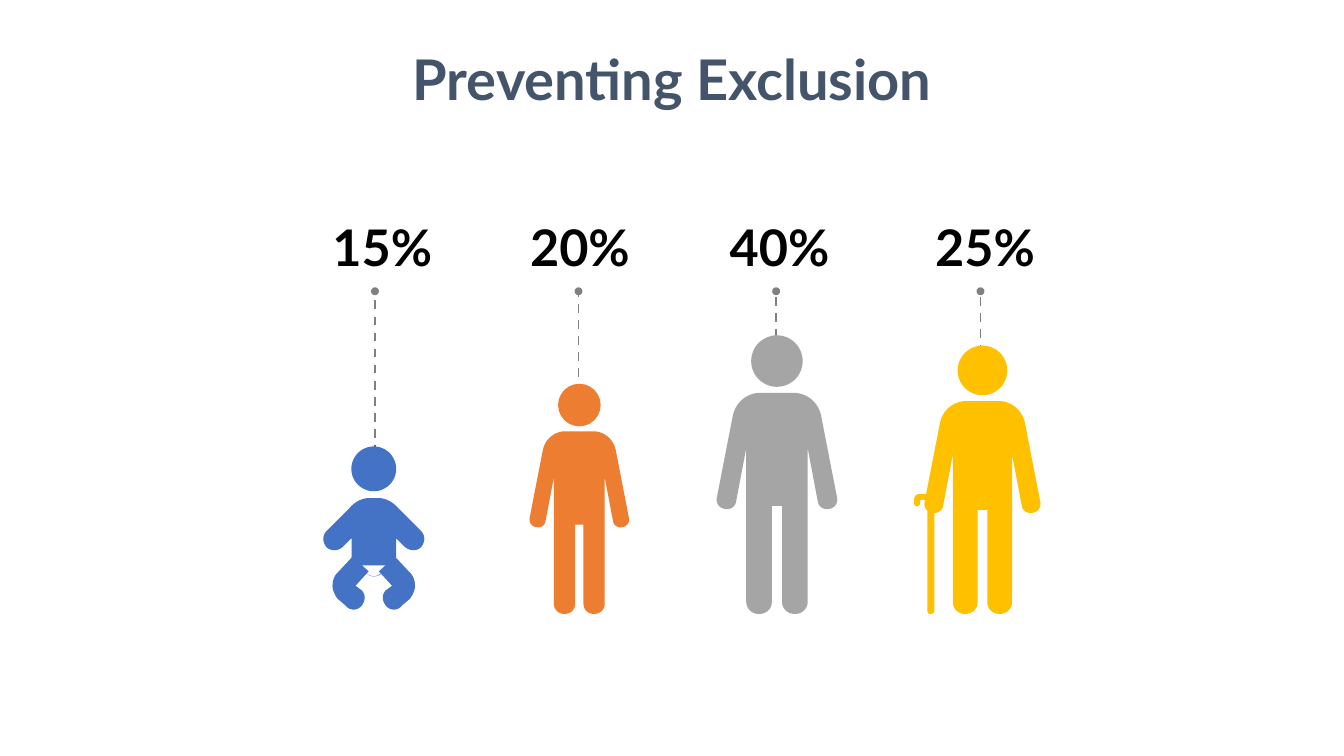
from lxml.etree import SubElement
from pptx import Presentation
from pptx.dml.color import RGBColor
from pptx.enum.shapes import MSO_CONNECTOR, MSO_SHAPE
from pptx.enum.text import MSO_AUTO_SIZE, PP_ALIGN
from pptx.oxml.ns import qn
from pptx.util import Cm, Pt

COLORS = {
    "title": "44546A", "label": "000000", "stem": "808080", "stem_foot": "606060",
    "baby": "4472C4", "child": "ED7D31", "adult": "A5A5A5", "senior": "FFC000",
}
FONT = "Lato"
FEET = 15.47
DOT_CENTRE = 7.34
DOT_SIZE = 0.2
DASH_LENGTH = 0.22
DASHES_PER_CM = 2.47
LABEL_TOP = 5.33

BODY_HALF = [
    (0, 0), (7.5, 0), (13.5, 0, 18.5, 4.1, 19.9, 10), (27.2, 47.5),
    (27.6, 49.8, 26.3, 52.1, 23.5, 52.5), (21.2, 53, 18.9, 51.6, 18.5, 49.3),
    (13.9, 25.1), (13.9, 94.5), (13.9, 97.7, 11.2, 100, 8.4, 100), (8, 100),
    (4.8, 100, 2.3, 97.7, 2.3, 94.5), (2.3, 51.1),
]
TORSO_HALF = [
    (0, 1.3), (0.1, 1.3), (0.3, 1.3, 0.48, 1.4, 0.61, 1.55), (1.19, 2.13),
    (1.3, 2.24, 1.3, 2.41, 1.19, 2.54), (1.09, 2.64, 0.91, 2.64, 0.79, 2.54),
    (0.56, 2.31), (0.56, 3), (0, 3),
]
BABY_LEG = [
    (0.91, 3.18), (0.53, 2.77), (0.13, 3.15), (0.46, 3.51), (0.3, 3.63),
    (0.2, 3.73, 0.2, 3.91, 0.33, 4.04), (0.43, 4.14, 0.61, 4.14, 0.71, 4.01),
    (0.91, 3.84), (0.99, 3.73, 1.04, 3.61, 1.04, 3.51),
    (1.04, 3.38, 0.99, 3.25, 0.91, 3.18),
]
NAPPY = [
    (-0.2, 3.18), (-0.56, 2.82), (0.56, 2.82), (0.2, 3.2),
    (0.08, 3.3, -0.08, 3.3, -0.18, 3.2), (-0.56, 2.82), (0.56, 2.82),
    (0.2, 3.18), (0.08, 3.3, -0.08, 3.3, -0.2, 3.18),
]
CANE = [
    (0.33, 0), (0.15, 0), (0.05, 0, 0, 0.05, 0, 0.13), (0, 0.23),
    (0, 0.28, 0.03, 0.31, 0.08, 0.31), (0.1, 0.31, 0.15, 0.28, 0.15, 0.23),
    (0.15, 0.15), (0.33, 0.15), (0.33, 2.92),
    (0.33, 3, 0.36, 3.02, 0.41, 3.02), (0.46, 3.02, 0.51, 3, 0.51, 2.92),
    (0.51, 0.15), (0.51, 0.08, 0.43, 0, 0.33, 0),
]

PEOPLE = [
    ("baby", "15%", 9.42, 11.25, 9.45, 11.84, 8.01),
    ("child", "20%", 14.6, 9.67, 14.58, 10.31, 12.99),
    ("adult", "40%", 19.58, 8.45, 19.56, 9.32, 18.02),
    ("senior", "25%", 24.76, 8.71, 24.71, 9.32, 23.2),
]


def rgb(name):
    return RGBColor.from_string(COLORS[name])


def flatten(outline, steps=10):
    points = []
    for node in outline:
        if len(node) == 2:
            points.append(node)
            continue
        curve = (points[-1], node[:2], node[2:4], node[4:])
        for step in range(1, steps + 1):
            t = step / steps
            weights = ((1 - t) ** 3, 3 * t * (1 - t) ** 2, 3 * t * t * (1 - t), t ** 3)
            points.append(tuple(sum(w * p[axis] for w, p in zip(weights, curve))
                                for axis in (0, 1)))
    return points


def mirror(points):
    return [(-x, y) for x, y in reversed(points)]


def paint(shape, color):
    shape.shadow.inherit = False
    shape.fill.solid()
    shape.fill.fore_color.rgb = rgb(color)
    shape.line.fill.background()


def draw_outline(page, points, left, top, color, scale=1):
    placed = [(Cm(left + x * scale), Cm(top + y * scale)) for x, y in points]
    builder = page.shapes.build_freeform(*placed[0])
    builder.add_line_segments(placed[1:])
    paint(builder.convert_to_shape(), color)


def draw_circle(page, centre, top, size, color):
    circle = page.shapes.add_shape(
        MSO_SHAPE.OVAL, Cm(centre - size / 2), Cm(top), Cm(size), Cm(size))
    paint(circle, color)


def draw_standing(page, centre, top, color):
    scale = (FEET - top) / 126
    half = flatten(BODY_HALF)
    draw_outline(page, half + mirror(half), centre, top + 26 * scale, color, scale)
    draw_circle(page, centre, top, 23.3 * scale, color)


def draw_senior(page, centre, top, color):
    draw_standing(page, centre, top, color)
    draw_outline(page, flatten(CANE), centre - 1.72, FEET - 3.02, color)


def draw_baby(page, centre, top, color):
    leg, torso = flatten(BABY_LEG), flatten(TORSO_HALF)
    for points in (mirror(leg), leg, torso + mirror(torso), flatten(NAPPY)):
        draw_outline(page, points, centre, top, color)
    draw_circle(page, centre, top, 1.13, color)


def draw_dash(page, centre, start, end, color):
    dash = page.shapes.add_connector(
        MSO_CONNECTOR.STRAIGHT, Cm(centre), Cm(start), Cm(centre), Cm(end))
    dash.line.color.rgb = rgb(color)
    dash.line.width = Pt(1.02)
    SubElement(dash.element.spPr, qn("a:effectLst"))


def draw_stem(page, centre, foot):
    dash_count = int((foot - DOT_CENTRE) * DASHES_PER_CM) + 1
    for index in range(dash_count):
        start = foot - index / DASHES_PER_CM
        end = max(start - DASH_LENGTH, DOT_CENTRE)
        draw_dash(page, centre, start, end, "stem_foot" if index < 2 else "stem")
    draw_circle(page, centre, DOT_CENTRE - DOT_SIZE / 2, DOT_SIZE, "stem")


def draw_text(page, text, left, top, width, height, size, color, wrap=True):
    box = page.shapes.add_textbox(Cm(left), Cm(top), Cm(width), Cm(height))
    box.text_frame.word_wrap = wrap
    box.text_frame.auto_size = MSO_AUTO_SIZE.SHAPE_TO_FIT_TEXT
    para = box.text_frame.paragraphs[0]
    para.text = text
    para.alignment = PP_ALIGN.CENTER
    para.font.name = FONT
    para.font.size = Pt(size)
    para.font.bold = True
    para.font.color.rgb = rgb(color)


def draw_person(page, kind, share, centre, top, stem_left, foot, label_left):
    draw_stem(page, stem_left, foot)
    figures = {"baby": draw_baby, "senior": draw_senior}
    figures.get(kind, draw_standing)(page, centre, top, kind)
    draw_text(page, share, label_left, LABEL_TOP, 3.25, 1.8, 36, "label")


def main():
    deck = Presentation()
    deck.slide_width, deck.slide_height = Cm(33.87), Cm(19.05)
    page = deck.slides.add_slide(deck.slide_layouts[6])
    draw_text(page, "Preventing Exclusion", 9.71, 0.99, 14.45, 1.96, 40, "title", wrap=False)
    for person in PEOPLE:
        draw_person(page, *person)
    deck.save("out.pptx")


if __name__ == "__main__":
    main()
